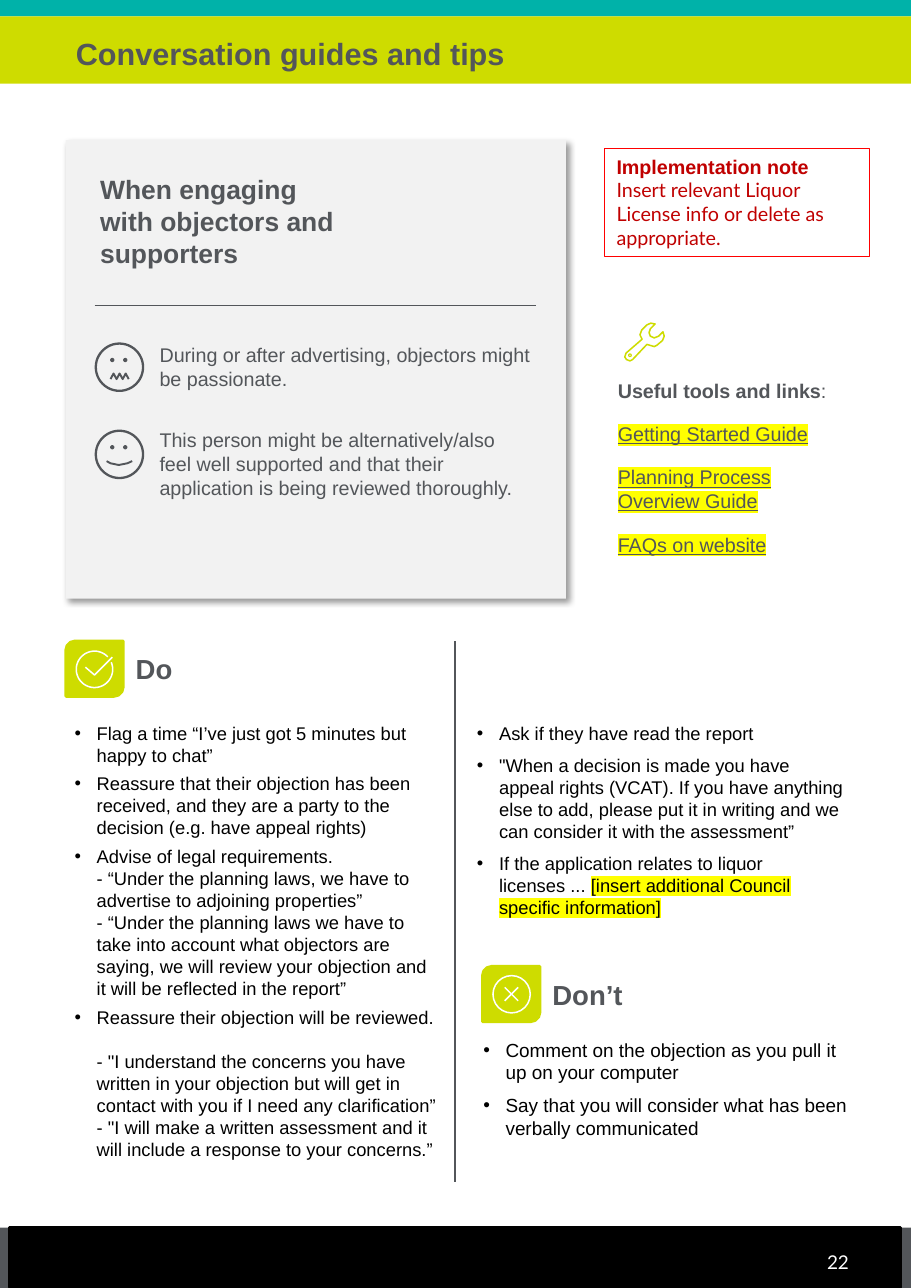
"""Build the conversation guides and tips page."""
from dataclasses import dataclass
from math import cos, radians, sin

from lxml.etree import SubElement
from pptx import Presentation
from pptx.dml.color import RGBColor
from pptx.enum.shapes import MSO_CONNECTOR as Wire, MSO_SHAPE as Kind
from pptx.enum.text import MSO_ANCHOR as Anchor, MSO_AUTO_SIZE as Auto, PP_ALIGN as Align
from pptx.oxml.ns import qn
from pptx.util import Cm, Pt

GREY, LIME, TEAL, WHITE, BLACK = "53565A", "CEDC00", "00B2A9", "FFFFFF", "000000"
RED, YELLOW = "C00000", "FFFF00"
Box = tuple[float, float, float, float]
Dots = list[tuple[float, float]]


@dataclass
class Seg:
    text: str
    bold: bool = False
    line: bool = False
    glow: bool = False
    font: str = "Arial"
    size: float = 0


@dataclass
class Para:
    segs: list[Seg]
    before: float = 0
    after: float = 0
    left: float = 0
    dot: bool = False


@dataclass
class Block:
    box: Box
    size: float
    color: str
    paras: list[Para]
    pads: tuple[float, float] = (0.25, 0.25)
    align: Align = Align.LEFT


@dataclass
class Stroke:
    dots: Dots
    color: str
    width: float
    shut: bool = False


def tint(code: str) -> RGBColor:
    return RGBColor.from_string(code)


def place(shape, box: Box) -> None:
    shape.left, shape.top, shape.width, shape.height = map(Cm, box)


def shape(kind: Kind, box: Box, fill: str = "", edge: str = "", width: float = 1):
    item = shapes.add_shape(kind, *map(Cm, box))
    item.shadow.inherit = False
    paint(item, fill, edge, width)
    return item


def paint(item, fill: str, edge: str, width: float) -> None:
    if fill:
        item.fill.solid()
        item.fill.fore_color.rgb = tint(fill)
    else:
        item.fill.background()
    if edge:
        item.line.color.rgb = tint(edge)
        item.line.width = Pt(width)
    else:
        item.line.fill.background()


def draw(stroke: Stroke) -> None:
    dots = [(Cm(x), Cm(y)) for x, y in stroke.dots]
    pen = shapes.build_freeform(*dots[0])
    pen.add_line_segments(dots[1:], close=stroke.shut)
    item = pen.convert_to_shape()
    item.shadow.inherit = False
    paint(item, "", stroke.color, stroke.width)


def wire(x1: float, y1: float, x2: float, y2: float, color: str, width: float) -> None:
    item = shapes.add_connector(Wire.STRAIGHT, *map(Cm, (x1, y1, x2, y2)))
    item.line.color.rgb = tint(color)
    item.line.width = Pt(width)
    SubElement(item.element.spPr, qn("a:effectLst"))


def style(run, seg: Seg, size: float, color: str) -> None:
    font = run.font
    font.size, font.bold = Pt(seg.size or size), seg.bold
    font.color.rgb = tint(color)
    if seg.line:
        font.underline = True
    if seg.glow:
        glow = SubElement(run.font._element, qn("a:highlight"))
        SubElement(glow, qn("a:srgbClr"), val=YELLOW)
    font.name = seg.font


def write(item, block: Block) -> None:
    frame = item.text_frame
    frame.word_wrap, frame.auto_size = True, Auto.NONE
    frame.vertical_anchor = Anchor.TOP
    frame.margin_left, frame.margin_right = map(Cm, block.pads)
    frame.margin_top = frame.margin_bottom = Cm(0.13)
    frame.text = "\n".join("" for _ in block.paras)
    for line, para in zip(frame.paragraphs, block.paras):
        props = line._p.get_or_add_pPr()
        props.set("marL", str(Cm(para.left)))
        props.set("indent", str(-Cm(para.left) if para.dot else 0))
        if para.dot:
            SubElement(props, qn("a:buFont"), typeface="Arial")
            SubElement(props, qn("a:buChar"), char="•")
        else:
            SubElement(props, qn("a:buNone"))
        line.alignment = block.align
        line.space_before, line.space_after = Pt(para.before), Pt(para.after)
        line.line_spacing = Pt(round(1.2 * (para.segs[0].size or block.size), 1))
        line.text = para.segs[0].text
        for seg in para.segs[1:]:
            line.add_run().text = seg.text
        if len(para.segs) == 1:
            for run in line.runs:
                style(run, para.segs[0], block.size, block.color)
        else:
            for run, seg in zip(line.runs, para.segs):
                style(run, seg, block.size, block.color)


def listing(rows: list[list[Seg]], gap: float) -> list[Para]:
    return [Para(row, gap if i else 0, left=0.51, dot=True) for i, row in enumerate(rows)]


def note(block: Block) -> None:
    write(shapes.add_textbox(*map(Cm, block.box)), block)


def ring(x: float, y: float, size: float, color: str, width: float) -> None:
    shape(Kind.OVAL, (x, y, size, size), edge=color, width=width)


deck = Presentation()
deck.slide_width, deck.slide_height = Cm(21.01), Cm(29.69)
slide = deck.slides.add_slide(deck.slide_layouts[4])
shapes = slide.shapes
title, *bodies = list(slide.placeholders)

shape(Kind.RECTANGLE, (0, 28.3, 21.01, 1.39), GREY)
shape(Kind.RECTANGLE, (0, 0, 21.01, 0.38), TEAL)
shape(Kind.RECTANGLE, (0.23, 28.3, 20.55, 1.39), BLACK, BLACK, 2)
shape(Kind.RECTANGLE, (0, 0.38, 21.01, 1.55), LIME)
card = shape(Kind.RECTANGLE, (1.52, 3.23, 11.53, 10.57), "F2F2F2")
shade = SubElement(card.element.spPr.find(qn("a:effectLst")), qn("a:outerShdw"),
                   blurRad=str(Pt(4)), dist=str(Pt(3)), dir="2700000", algn="tl", rotWithShape="0")
SubElement(SubElement(shade, qn("a:srgbClr"), val=BLACK), qn("a:alpha"), val="40000")

place(title, (1.75, 0.86, 17.53, 0.91))
write(title, Block((0, 0, 0, 0), 20, GREY, [Para([Seg("Conversation guides and tips", True)])], (0, 0)))
title.text_frame.vertical_anchor = Anchor.MIDDLE
title.text_frame.paragraphs[0].line_spacing = 0.8

blocks = [
    Block((2.06, 3.86, 10.41, 10.03), 12.9, GREY, [
        Para([Seg("When engaging\vwith objectors and\vsupporters", True, size=17.3)], after=42),
        Para([Seg("During or after advertising, objectors might be passionate.")], 6.5, 18, 1.37),
        Para([Seg("This person might be alternatively/also feel well supported and that their "
                  "application is being reviewed thoroughly.")], 6.5, left=1.37)]),
    Block((1.52, 16.51, 8.64, 11.33), 12, BLACK, listing([
        [Seg("Flag a time “I’ve just got 5 minutes but happy to chat”")],
        [Seg("Reassure that their objection has been received, and they are a party to the "
             "decision (e.g. have appeal rights)")],
        [Seg("Advise of legal requirements.\v- “Under the planning laws, we have to advertise to "
             "adjoining properties”\v- “Under the planning laws we have to take into account what "
             "objectors are saying, we will review your objection and it will be reflected in the report”")],
        [Seg("Reassure their objection will be reviewed.")]], 4.3) + [
        Para([Seg("- \"I understand the concerns you have written in your objection but will get in "
                  "contact with you if I need any clarification”\v- \"I will make a written assessment "
                  "and it will include a response to your concerns.”")], 14.4, left=0.51)], (0.2, 0)),
    Block((10.72, 16.51, 9.14, 5.08), 12, BLACK, listing([
        [Seg("Ask if they have read the report")],
        [Seg("\"When a decision is made you have appeal rights (VCAT). If you have anything else to "
             "add, please put it in writing and we can consider it with the assessment”")],
        [Seg("If the application relates to liquor licenses ... "),
         Seg("[insert additional Council specific information]", glow=True)]], 6.5), (0.28, 0.28)),
    Block((10.9, 23.8, 9.14, 2.87), 12.4, BLACK, listing([
        [Seg("Comment on the objection as you pull it up on your computer")],
        [Seg("Say that you will consider what has been verbally communicated")]], 6.5)),
]
for body, block in zip(bodies, blocks):
    place(body, block.box)
    write(body, block)
for item in (title, *bodies):
    shapes.element.append(item.element)

hint = Block((13.94, 3.43, 6.12, 2.49), 12.9, RED, [
    Para([Seg("Implementation note", True)]),
    Para([Seg("Insert relevant Liquor License info or delete as appropriate.", font="Lato")])], (0.28, 0.28))
write(shape(Kind.RECTANGLE, hint.box, edge="FF0000", width=0.75), hint)
links = ["Getting Started Guide", "Planning Process Overview Guide", "FAQs on website"]
note(Block((14, 8.59, 5.54, 4.42), 12.9, GREY, [
    Para([Seg("Useful tools and links", True), Seg(":")]),
    *(Para([Seg(link, line=True, glow=True)], 12.9) for link in links)]))
note(Block((18.26, 28.7, 1.57, 0.79), 12.4, WHITE, [Para([Seg("22", font="Lato")])], align=Align.RIGHT))
wire(2.18, 7.04, 12.37, 7.04, GREY, 0.75)
wire(10.49, 14.78, 10.49, 27.25, GREY, 1)

for top in (7.92, 9.93):
    ring(2.21, top, 1.09, GREY, 1.5)
    for left in (2.54, 2.84):
        shape(Kind.OVAL, (left, top + 0.33, 0.1, 0.1), GREY)
for word, x, y in (("Do", 1.52, 14.78), ("Don’t", 11.13, 22.28)):
    shape(Kind.ROUND_2_DIAG_RECTANGLE, (x, y, 1.32, 1.27), LIME, LIME, 2)
    note(Block((x + 1.36, y + 0.13, 3, 1.02), 18, GREY, [Para([Seg(word, True)])]))

ring(11.37, 22.49, 0.86, WHITE, 1)
wire(11.64, 22.76, 11.95, 23.07, WHITE, 1)
wire(11.64, 23.07, 11.95, 22.76, WHITE, 1)
ring(14.5, 8.16, 0.06, LIME, 0.75)
wrench = [(15.29, 7.65), (15.19, 7.75), (15.09, 7.79), (15, 7.75), (14.97, 7.67), (15, 7.58),
          (15.11, 7.47), (15.01, 7.45), (14.92, 7.49), (14.8, 7.61), (14.76, 7.72), (14.81, 7.82),
          (14.44, 8.14), (14.41, 8.23), (14.45, 8.29), (14.53, 8.32), (14.59, 8.29), (14.92, 7.94),
          (15.09, 7.99), (15.15, 7.96), (15.28, 7.85), (15.32, 7.75)]
arc = [(2.18 + 0.42 * cos(radians(a)), 15.43 + 0.42 * sin(radians(a))) for a in range(-23, 318, 5)]
for stroke in (
    Stroke([(2.55 + 0.07 * i, 8.61 if i % 2 else 8.74) for i in range(7)], GREY, 1.25),
    Stroke([(2.46, 10.63), (2.55, 10.68), (2.74, 10.72), (2.94, 10.68), (3.05, 10.63)], GREY, 1.25),
    Stroke(wrench, LIME, 1, True),
    Stroke(arc, WHITE, 1),
    Stroke([(1.97, 15.38), (2.18, 15.56), (2.59, 15.15)], WHITE, 1),
):
    draw(stroke)

deck.save("out.pptx")
